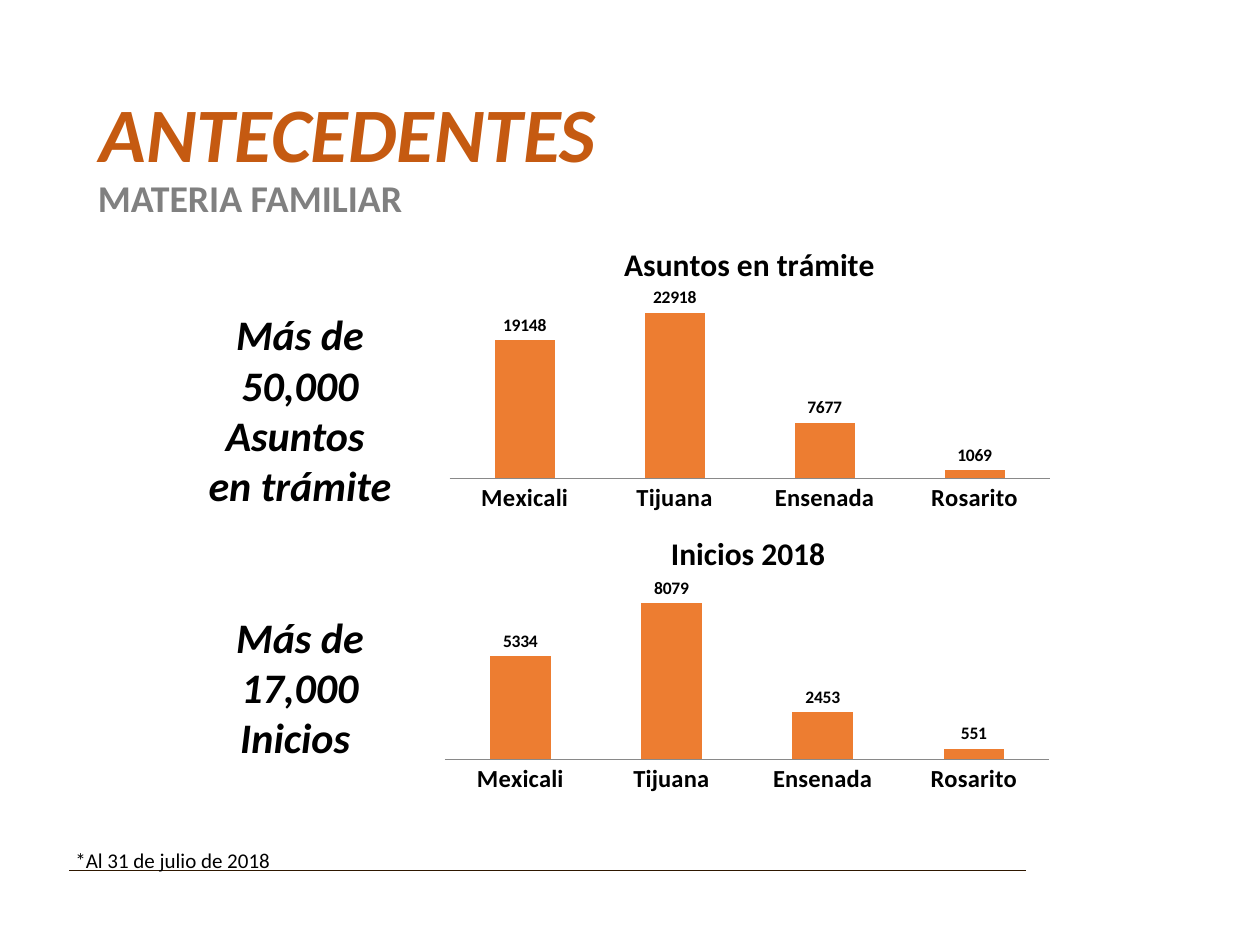
from dataclasses import dataclass
from typing import Any

import pptx
import pptx.chart.data
import pptx.dml.color
import pptx.enum.chart
import pptx.enum.shapes
import pptx.enum.text
import pptx.oxml
import pptx.oxml.ns
import pptx.util

PX = 9144  # EMU in one px, at 100 px to the inch
FONT = "Calibri"
COLORS = {
    "title": "C55A11",
    "subtitle": "808080",
    "text": "000000",
    "bar": "ED7D31",
    "axis": "898989",
    "rule": "2E1700",
}
CITIES = ("Mexicali", "Tijuana", "Ensenada", "Rosarito")
ALIGN = pptx.enum.text.PP_ALIGN


@dataclass(frozen=True)
class Area:
    left: int
    top: int
    width: int
    height: int

    def emu(self) -> tuple[int, ...]:
        return tuple(px * PX for px in (self.left, self.top, self.width, self.height))


@dataclass(frozen=True)
class Note:
    area: Area
    lines: tuple[str, ...]
    size: float
    color: str = "text"
    bold: bool = True
    italic: bool = False
    align: Any = ALIGN.CENTER


@dataclass(frozen=True)
class CityChart:
    area: Area
    title: str
    title_left: float
    values: tuple[int, ...]
    maximum: int


NOTES = (
    Note(Area(152, 480, 172, 131), ("Más de 17,000 Inicios ",), 24, italic=True),
    Note(Area(50, 134, 297, 46), ("MATERIA FAMILIAR",), 21.6, "subtitle"),
    Note(Area(152, 240, 172, 172), ("Más de", "50,000 Asuntos \ven trámite "), 24, italic=True),
    Note(Area(50, 668, 255, 30), ("*Al 31 de julio de 2018",), 12, bold=False, align=ALIGN.LEFT),
)
CHARTS = (
    CityChart(Area(347, 181, 496, 231), "Asuntos en trámite", 0.29,
              (19148, 22918, 7677, 1069), 25000),
    CityChart(Area(343, 411, 500, 223), "Inicios 2018", 0.37,
              (5334, 8079, 2453, 551), 9000),
)


def rgb(name: str) -> pptx.dml.color.RGBColor:
    return pptx.dml.color.RGBColor.from_string(COLORS[name])


def style_font(font: Any, size: float, color: str = "text", bold: bool = True,
               italic: bool = False) -> None:
    formats = {"name": FONT, "size": pptx.util.Pt(size), "bold": bold, "italic": italic}
    for name, value in formats.items():
        setattr(font, name, value)
    font.color.rgb = rgb(color)


def set_layout(parent: Any, index: int, **values: Any) -> None:
    """Give a chart part a manual layout as fractions of the chart."""
    for old in parent.findall(pptx.oxml.ns.qn("c:layout")):
        parent.remove(old)
    fields = "".join(f'<c:{name} val="{value}"/>' for name, value in values.items())
    parent.insert(index, pptx.oxml.parse_xml(
        f'<c:layout {pptx.oxml.ns.nsdecls("c")}><c:manualLayout>{fields}'
        "</c:manualLayout></c:layout>"))


def add_title(page: Any) -> None:
    box = page.shapes.title
    box.left, box.top, box.width, box.height = Area(69, 71, 862, 64).emu()
    box.text_frame.text = "ANTECEDENTES"
    box.text_frame.vertical_anchor = pptx.enum.text.MSO_ANCHOR.TOP
    para = box.text_frame.paragraphs[0]
    para.alignment = ALIGN.LEFT
    para.line_spacing = 0.9
    style_font(para.runs[0].font, 44, "title", italic=True)


def add_note(page: Any, note: Note) -> None:
    frame = page.shapes.add_textbox(*note.area.emu()).text_frame
    frame.word_wrap = True
    frame.text = "\n".join(note.lines)
    for para in frame.paragraphs:
        para.alignment = note.align
        for span in para.runs:
            style_font(span.font, note.size, note.color, note.bold, note.italic)


def add_chart(page: Any, item: CityChart) -> None:
    data = pptx.chart.data.CategoryChartData()
    data.categories = CITIES
    data.add_series("Series 1", item.values)
    kind = pptx.enum.chart.XL_CHART_TYPE.COLUMN_CLUSTERED
    chart = page.shapes.add_chart(kind, *item.area.emu(), data).chart
    style_font(chart.font, 10, bold=False)
    chart.has_legend = False

    # Title and plot positions
    frame = chart.chart_title.text_frame
    frame.text = item.title
    style_font(frame.paragraphs[0].runs[0].font, 18)
    set_layout(chart.element.xpath("c:chart/c:title")[0], 1,
               xMode="edge", yMode="edge", x=item.title_left, y=0.03)
    set_layout(chart.element.xpath("c:chart/c:plotArea")[0], 0,
               layoutTarget="inner", xMode="edge", yMode="edge",
               x=0.02, y=0.24, w=0.96, h=0.62)

    # Axes
    values, cities = chart.value_axis, chart.category_axis
    for name, value in {"visible": False, "has_major_gridlines": False,
                        "minimum_scale": 0, "maximum_scale": item.maximum}.items():
        setattr(values, name, value)
    cities.major_tick_mark = pptx.enum.chart.XL_TICK_MARK.NONE
    cities.format.line.color.rgb = rgb("axis")
    cities.format.line.width = pptx.util.Pt(0.5)
    style_font(cities.tick_labels.font, 14)

    # Bars and their value labels
    plot = chart.plots[0]
    plot.gap_width = 150
    plot.vary_by_categories = False
    bars = plot.series[0]
    bars.format.fill.solid()
    bars.format.fill.fore_color.rgb = rgb("bar")
    labels = bars.data_labels
    labels.show_value = True
    labels.position = pptx.enum.chart.XL_LABEL_POSITION.OUTSIDE_END
    style_font(labels.font, 10)


def add_rule(page: Any) -> None:
    ends = (px * PX for px in (814, 691, 55, 691))
    rule = page.shapes.add_connector(pptx.enum.shapes.MSO_CONNECTOR.STRAIGHT, *ends)
    rule.line.color.rgb = rgb("rule")
    rule.line.width = pptx.util.Pt(0.5)
    properties = rule.element.find(pptx.oxml.ns.qn("p:spPr"))
    properties.append(pptx.oxml.parse_xml(
        f'<a:effectLst {pptx.oxml.ns.nsdecls("a")}/>'))


def main() -> None:
    deck = pptx.Presentation()
    deck.slide_width, deck.slide_height = 1000 * PX, 750 * PX
    page = deck.slides.add_slide(deck.slide_layouts[5])
    add_rule(page)
    add_title(page)
    for note in NOTES:
        add_note(page, note)
    for item in CHARTS:
        add_chart(page, item)
    deck.save("out.pptx")


if __name__ == "__main__":
    main()
